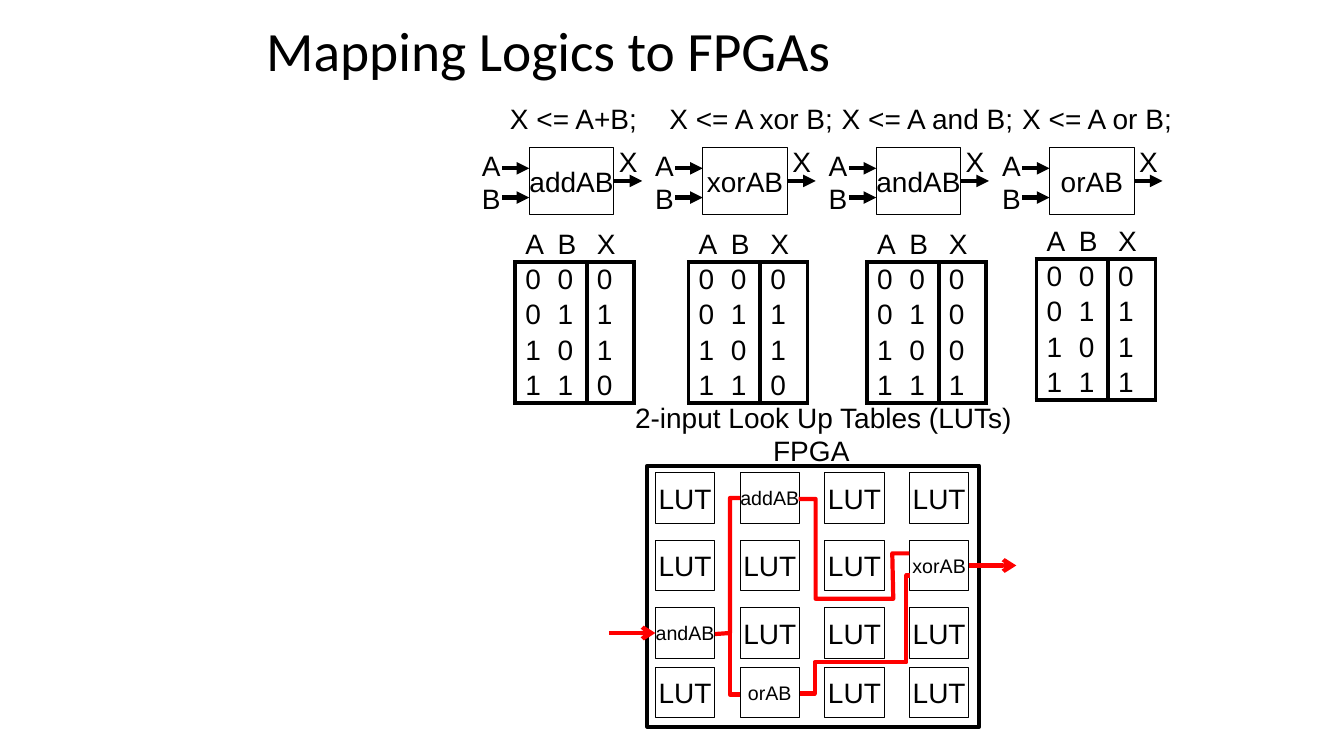
from dataclasses import dataclass

from lxml import etree
from pptx import Presentation
from pptx.dml.color import RGBColor
from pptx.enum.shapes import MSO_CONNECTOR, MSO_SHAPE
from pptx.enum.text import MSO_ANCHOR, MSO_AUTO_SIZE, PP_ALIGN
from pptx.oxml.ns import qn
from pptx.util import Inches, Pt

RECTANGLE = MSO_SHAPE.RECTANGLE
STRAIGHT = MSO_CONNECTOR.STRAIGHT
MIDDLE = MSO_ANCHOR.MIDDLE
LEFT, CENTER = PP_ALIGN.LEFT, PP_ALIGN.CENTER
NO_AUTOFIT = MSO_AUTO_SIZE.NONE
LEFT_SIDE, RIGHT_SIDE = 1, 3


@dataclass(frozen=True)
class Theme:
    ink: RGBColor = RGBColor(0, 0, 0)
    wire: RGBColor = RGBColor(255, 0, 0)
    title_font: str = "Calibri"
    body_font: str = "Arial"
    title_size: float = 39.6
    body_size: float = 20
    small_size: float = 14
    thin: float = 0.75
    thick: float = 3


THEME = Theme()

# Gate name, expression with its left offset and width, truth table position, outputs
GATES = [
    ("addAB", "X <= A+B;", -0.29, 1.47, (5.11, 2.25), "0110"),
    ("xorAB", "X <= A xor B;", -0.43, 1.84, (6.83, 2.25), "0110"),
    ("andAB", "X <= A and B;", -0.44, 1.91, (8.6, 2.25), "0001"),
    ("orAB", "X <= A or B;", -0.37, 1.69, (10.28, 2.22), "0111"),
]
GATE_LEFT, GATE_TOP, GATE_STEP = 5.25, 1.46, 1.72

# Logic cells: column and row of those that hold a gate
MAPPED = {(1, 0): "addAB", (3, 1): "xorAB", (0, 2): "andAB", (1, 3): "orAB"}
CELL_ROWS = [0.07, 0.74, 1.41, 2.0]
CELL_LEFT, CELL_STEP = 0.08, 0.84

# Corner points of each wire, measured from the corner of the FPGA
WIRES = [
    [(0.67, 1.67), (0.82, 1.66), (0.82, 0.32), (0.92, 0.32)],
    [(1.5, 0.33), (1.67, 0.33), (1.67, 1.32), (2.44, 1.32), (2.43, 0.87), (2.6, 0.87)],
    [(0.82, 1.66), (0.82, 2.27), (0.92, 2.27)],
    [(1.51, 2.26), (1.66, 2.26), (1.66, 1.95), (2.57, 1.95), (2.57, 1.09), (2.61, 1.09)],
]


def set_all(target, values):
    for name, value in values.items():
        setattr(target, name, value)


def write(frame, text, size=THEME.body_size, font=THEME.body_font, align=LEFT):
    frame.text = text
    paragraph = frame.paragraphs[0]
    paragraph.alignment = align
    set_all(paragraph.runs[0].font, {"name": font, "size": Pt(size), "bold": False})
    paragraph.runs[0].font.color.rgb = THEME.ink
    return paragraph


def style_line(line, color, width):
    line.color.rgb = color
    line.width = Pt(width)


def add_label(slide, text, left, top, width, height=0.43):
    label = slide.shapes.add_textbox(
        Inches(left), Inches(top), Inches(width), Inches(height))
    label.text_frame.word_wrap = False
    write(label.text_frame, text)


def add_box(slide, left, top, width, height, text="", size=THEME.body_size,
            weight=THEME.thin):
    box = slide.shapes.add_shape(
        RECTANGLE, Inches(left), Inches(top), Inches(width), Inches(height))
    box.shadow.inherit = False
    box.fill.background()
    style_line(box.line, THEME.ink, weight)
    if text:
        set_all(box.text_frame, {"word_wrap": False, "vertical_anchor": MIDDLE})
        write(box.text_frame, text, size, align=CENTER)
    return box


def add_arrow(slide, start, end, color=THEME.ink, head="triangle"):
    arrow = slide.shapes.add_connector(
        STRAIGHT, *(Inches(length) for length in (*start, *end)))
    style_line(arrow.line, color, THEME.thick)
    etree.SubElement(arrow.line._get_or_add_ln(), qn("a:tailEnd"), type=head)
    etree.SubElement(arrow._element.spPr, qn("a:effectLst"))
    return arrow


def add_title(slide, text, left, top, width, height):
    title = slide.shapes.title
    set_all(title, {"left": Inches(left), "top": Inches(top),
                    "width": Inches(width), "height": Inches(height)})
    set_all(title.text_frame, {"auto_size": NO_AUTOFIT, "vertical_anchor": MIDDLE})
    heading = write(title.text_frame, text, THEME.title_size, THEME.title_font)
    heading.line_spacing = 0.9


def add_gate(slide, left, top, name, expression, shift, width):
    add_label(slide, expression, left + shift, top - 0.5, width, 0.44)
    gate = add_box(slide, left, top, 0.84, 0.67, name)
    for pin, label_top, arrow_top in (("A", -0.04, 0.21), ("B", 0.29, 0.5)):
        add_label(slide, pin, left - 0.57, top + label_top, 0.39)
        y = top + arrow_top
        add_arrow(slide, (left - 0.27, y), (left, y))
    add_label(slide, "X", left + 0.79, top - 0.08, 0.39)
    y = top + 0.335
    output = add_arrow(slide, (left + 0.84, y), (left + 1.12, y))
    output.begin_connect(gate, RIGHT_SIDE)


def set_borders(cell, shown):
    properties = cell._tc.get_or_add_tcPr()
    for position, side in enumerate(("lnL", "lnR", "lnT", "lnB")):
        border = etree.Element(qn(f"a:{side}"), w=str(Pt(THEME.thick)))
        if side in shown:
            fill = etree.SubElement(border, qn("a:solidFill"))
            etree.SubElement(fill, qn("a:srgbClr"), val=str(THEME.ink))
        else:
            etree.SubElement(border, qn("a:noFill"))
        properties.insert(position, border)


def add_truth_table(slide, left, top, outputs):
    rows = ["ABX"] + [f"{i // 2}{i % 2}{output}" for i, output in enumerate(outputs)]
    widths, row_height = [0.35, 0.36, 0.47], 0.35
    table = slide.shapes.add_table(
        len(rows), len(widths), Inches(left), Inches(top),
        Inches(sum(widths)), Inches(row_height * len(rows))).table
    set_all(table, {"first_row": False, "horz_banding": False})
    for column, width in zip(table.columns, widths):
        column.width = Inches(width)
    for r, values in enumerate(rows):
        table.rows[r].height = Inches(row_height)
        for c, value in enumerate(values):
            cell = table.cell(r, c)
            set_all(cell, {"margin_left": Inches(0.07 if c == 1 else 0.1),
                           "margin_right": 0, "margin_top": 0, "margin_bottom": 0,
                           "vertical_anchor": MIDDLE})
            write(cell.text_frame, value)
            cell.fill.background()
            # Frame around the values, with a rule before the output column
            shown = {0: {"lnB"}, 1: {"lnT"}, len(rows) - 1: {"lnB"}}.get(r, set())
            if r > 0:
                shown = shown | ({"lnL"}, {"lnR"}, {"lnL", "lnR"})[c]
            set_borders(cell, shown)


def add_fpga(slide, left, top):
    add_box(slide, left, top, 3.29, 2.59, weight=THEME.thick)
    add_label(slide, "FPGA", left + 1.15, top - 0.37, 0.96)

    # Grid of logic cells
    cells = {}
    for row, row_top in enumerate(CELL_ROWS):
        for column in range(4):
            name = MAPPED.get((column, row), "LUT")
            size = THEME.body_size if name == "LUT" else THEME.small_size
            cells[name] = add_box(slide, left + CELL_LEFT + column * CELL_STEP,
                                  top + row_top, 0.59, 0.5, name, size)

    # Signals in and out
    signal = {"color": THEME.wire, "head": "arrow"}
    entry = add_arrow(slide, (left - 0.38, top + 1.66), (left + 0.08, top + 1.66), **signal)
    entry.end_connect(cells["andAB"], LEFT_SIDE)
    leaving = add_arrow(slide, (left + 3.19, top + 0.99), (left + 3.66, top + 0.99), **signal)
    leaving.begin_connect(cells["xorAB"], RIGHT_SIDE)

    # Wires between cells
    for corners in WIRES:
        points = [(Inches(left + x), Inches(top + y)) for x, y in corners]
        builder = slide.shapes.build_freeform(*points[0])
        builder.add_line_segments(points[1:], close=False)
        wire = builder.convert_to_shape()
        wire.shadow.inherit = False
        wire.fill.background()
        style_line(wire.line, THEME.wire, THEME.thick)


def main():
    deck = Presentation()
    set_all(deck, {"slide_width": Inches(13.33), "slide_height": Inches(7.5)})
    slide = deck.slides.add_slide(deck.slide_layouts[5])
    add_title(slide, "Mapping Logics to FPGAs", 2.54, 0.33, 6.5, 0.41)
    add_fpga(slide, 6.42, 4.62)
    for i, (name, expression, shift, width, corner, outputs) in enumerate(GATES):
        add_gate(slide, GATE_LEFT + i * GATE_STEP, GATE_TOP, name, expression, shift, width)
        add_truth_table(slide, *corner, outputs)
    add_label(slide, "2-input Look Up Tables (LUTs)", 6.2, 3.92, 4)
    deck.save("out.pptx")


if __name__ == "__main__":
    main()
